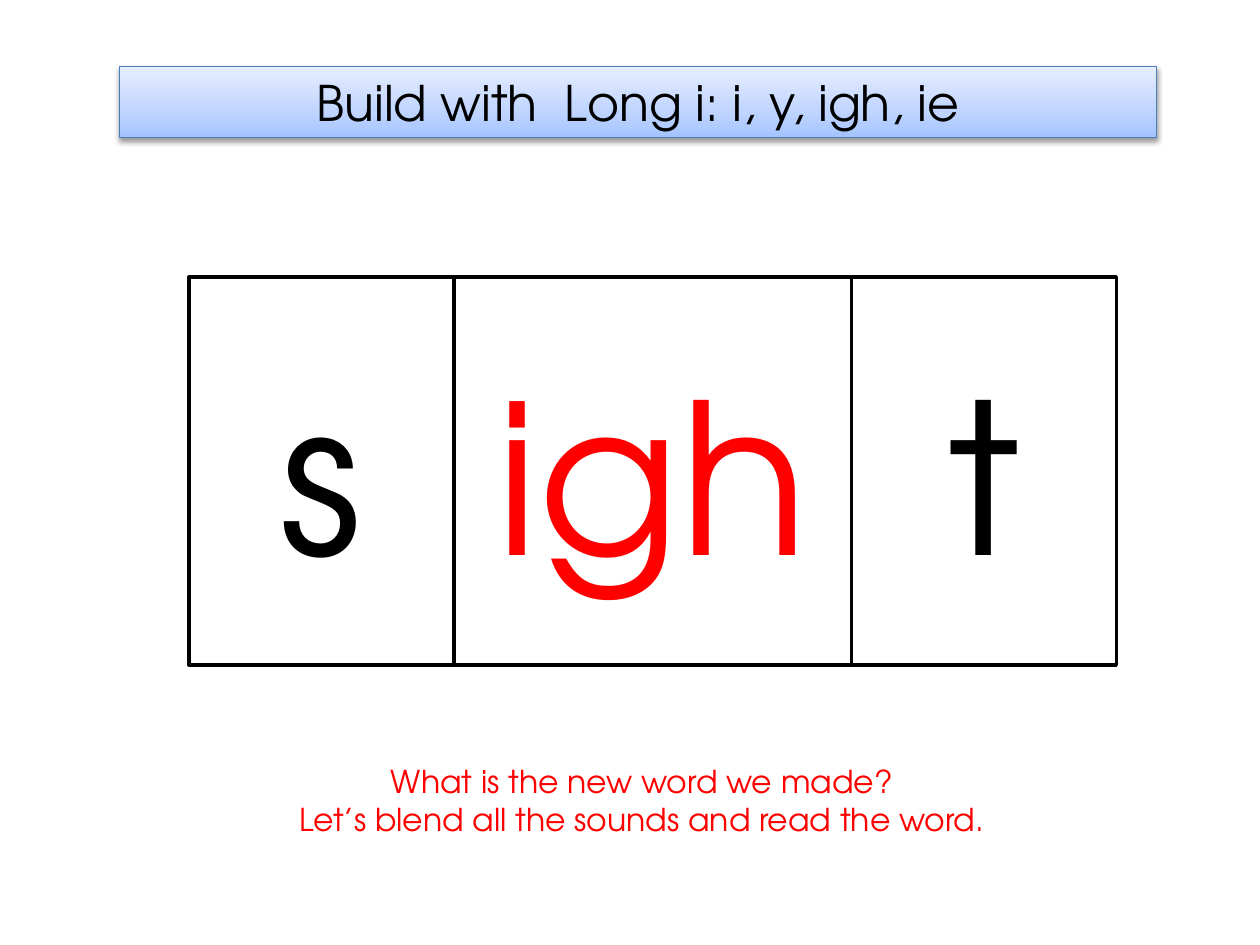
from copy import deepcopy

from pptx import Presentation
from pptx.dml.color import RGBColor
from pptx.enum.shapes import MSO_SHAPE as Shape
from pptx.enum.text import MSO_ANCHOR as Anchor, MSO_AUTO_SIZE as Auto, PP_ALIGN as Align
from pptx.oxml import parse_xml
from pptx.oxml.ns import nsdecls, qn
from pptx.util import Inches, Pt

FONT = "TeX Gyre Adventor"
BLACK, RED, WHITE = "000000", "FF0000", "FFFFFF"
SHADE = (
    f'<a:effectLst {nsdecls("a")}>'
    '<a:outerShdw blurRad="39370" dist="20320" dir="5400000" rotWithShape="0">'
    '<a:srgbClr val="000000"><a:alpha val="38000"/></a:srgbClr>'
    "</a:outerShdw></a:effectLst>"
)


def paint(target, color):
    target.rgb = RGBColor.from_string(color)


def write(frame, lines, size, color, anchor=Anchor.MIDDLE):
    frame.word_wrap = True
    frame.vertical_anchor = anchor
    for i, line in enumerate(lines):
        para = frame.add_paragraph() if i else frame.paragraphs[0]
        para.alignment = Align.CENTER
        run = para.add_run()
        run.text = line
        run.font.name = FONT
        run.font.size = Pt(size)
        paint(run.font.color, color)


def outline(shape, color, width):
    paint(shape.line.color, color)
    shape.line.width = Pt(width)


def add_title(slide, left, top, width, height):
    bar = slide.shapes.title
    bar.left, bar.top = Inches(left), Inches(top)
    bar.width, bar.height = Inches(width), Inches(height)
    bar.fill.gradient()
    bar.fill.gradient_angle = 90
    props = bar._element.spPr
    stops = props.find(qn("a:gradFill")).find(qn("a:gsLst"))
    stops.insert(1, deepcopy(stops[0]))
    shades = [(0, "A4C4FF"), (0.35, "BFD4FF"), (1, "E6EEFF")]
    for stop, (place, color) in zip(bar.fill.gradient_stops, shades):
        stop.position = place
        paint(stop.color, color)
    outline(bar, "4B7EBC", 0.75)
    props.append(parse_xml(SHADE))
    bar.text_frame.auto_size = Auto.NONE
    write(bar.text_frame, ["Build with  Long i: i, y, igh, ie"], 28, BLACK)


def add_cards(slide, left, top, width, height):
    cards = [("s", 2, BLACK), ("igh", 3, RED), ("t", 2, BLACK)]
    unit = width / sum(share for _, share, _ in cards)
    for sound, share, color in cards:
        card = slide.shapes.add_shape(
            Shape.RECTANGLE, Inches(left), Inches(top), Inches(share * unit), Inches(height)
        )
        card.shadow.inherit = False
        card.fill.solid()
        paint(card.fill.fore_color, WHITE)
        outline(card, BLACK, 2)
        write(card.text_frame, [sound], 120, color)
        left += share * unit


def add_prompt(slide, left, top, width, height):
    box = slide.shapes.add_textbox(Inches(left), Inches(top), Inches(width), Inches(height))
    lines = ["What is the new word we made?", "Let’s blend all the sounds and read the word."]
    write(box.text_frame, lines, 18, RED, Anchor.TOP)
    box.text_frame.auto_size = Auto.SHAPE_TO_FIT_TEXT


def main():
    deck = Presentation()
    deck.slide_width, deck.slide_height = Inches(10), Inches(7.5)
    slide = deck.slides.add_slide(deck.slide_layouts[5])
    add_title(slide, 0.95, 0.53, 8.23, 0.56)
    add_cards(slide, 1.5, 2.2, 7.36, 3.08)
    add_prompt(slide, 1.61, 6, 6.97, 0.71)
    deck.save("out.pptx")


if __name__ == "__main__":
    main()
